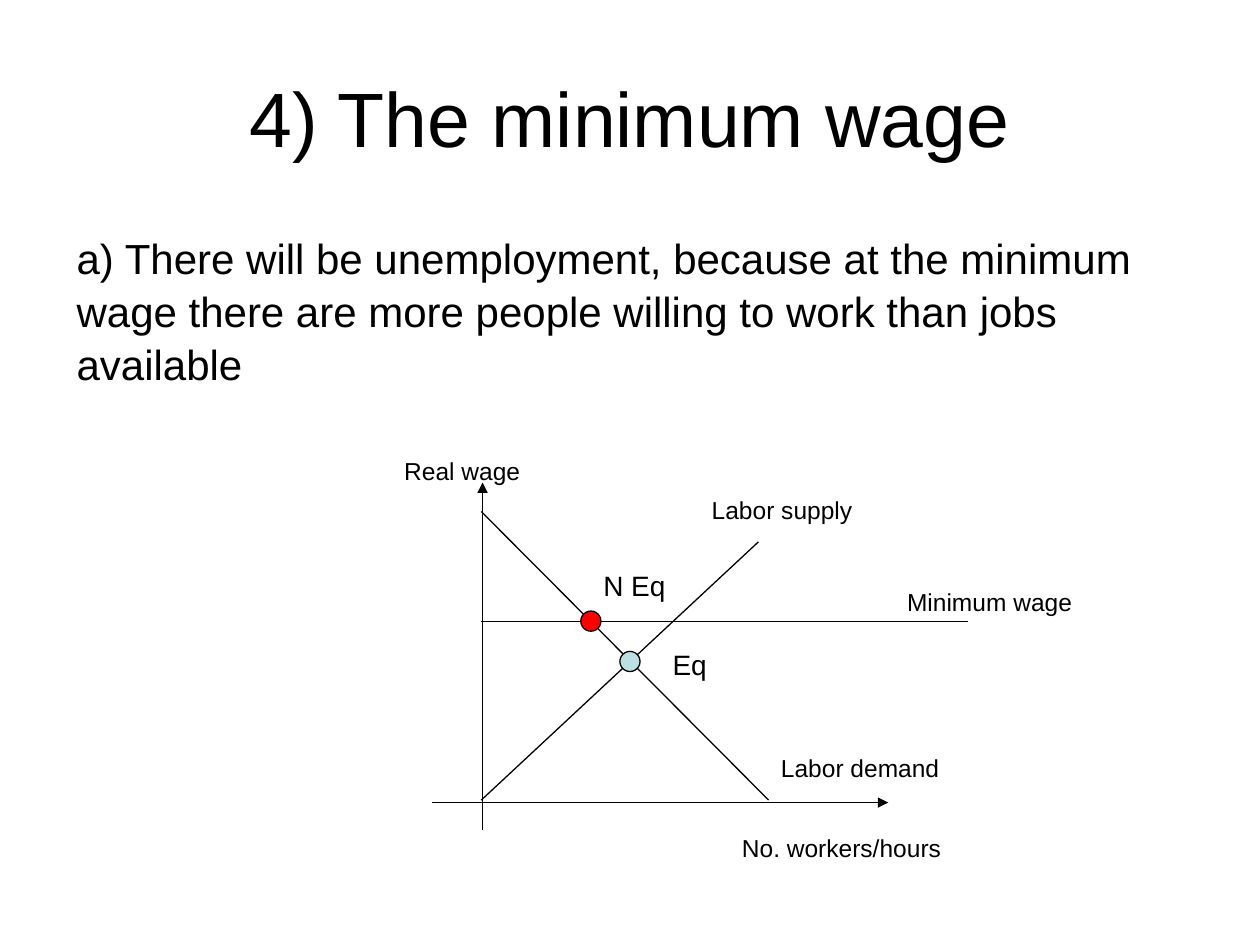
from lxml.etree import SubElement as Sub
from pptx import Presentation
from pptx.dml.color import RGBColor
from pptx.enum.shapes import MSO_CONNECTOR as Link, MSO_SHAPE as Shape
from pptx.enum.text import MSO_ANCHOR as Anchor, MSO_AUTO_SIZE as Fit, PP_ALIGN as Align
from pptx.oxml.ns import qn
from pptx.util import Inches, Pt

BLACK = "000000"


def color(code):
    return RGBColor.from_string(code)


def place(item, left, top, width, height):
    item.left, item.top = Inches(left), Inches(top)
    item.width, item.height = Inches(width), Inches(height)


def write(frame, text, size):
    frame.text = text
    para = frame.paragraphs[0]
    para.font.name = "Arial"
    para.font.size = Pt(size)
    para.font.color.rgb = color(BLACK)
    return para


def stroke(line):
    line.color.rgb = color(BLACK)
    line.width = Pt(0.75)


def add_title(slide, text):
    title = slide.shapes.title
    place(title, 0.5, 0.3, 9, 1.25)
    title.text_frame.vertical_anchor = Anchor.MIDDLE
    write(title.text_frame, text, 44).alignment = Align.CENTER


def add_body(slide, text):
    box = slide.shapes.add_textbox(0, 0, 0, 0)
    place(box, 0.51, 1.78, 9, 4.95)
    box.text_frame.word_wrap = True
    write(box.text_frame, text, 24).line_spacing = 1.05


def add_line(slide, x1, y1, x2, y2, arrow=False):
    ends = [Inches(n) for n in (x1, y1, x2, y2)]
    link = slide.shapes.add_connector(Link.STRAIGHT, *ends)
    stroke(link.line)
    if arrow:
        Sub(link.line._get_or_add_ln(), qn("a:tailEnd"), type="triangle")
    Sub(link._element.spPr, qn("a:effectLst"))


def add_dot(slide, x, y, fill):
    size = 0.16
    dot = slide.shapes.add_shape(Shape.OVAL, 0, 0, 0, 0)
    place(dot, x - size / 2, y - size / 2, size, size)
    dot.shadow.inherit = False
    dot.fill.solid()
    dot.fill.fore_color.rgb = color(fill)
    stroke(dot.line)


def add_label(slide, text, left, top, width, size=14):
    box = slide.shapes.add_textbox(0, 0, 0, 0)
    place(box, left, top, width, 0.34 if size == 14 else 0.37)
    box.text_frame.word_wrap = False
    box.text_frame.auto_size = Fit.SHAPE_TO_FIT_TEXT
    write(box.text_frame, text, size)


def add_graph(slide):
    left, base, wage = 3.82, 6.35, 4.93
    add_line(slide, 3.83, 6.59, 3.83, 3.83, True)
    add_line(slide, 3.43, 6.37, 7.05, 6.37, True)
    add_line(slide, left, base, 6.02, 4.3)
    add_line(slide, left, 4.06, 6.1, base)
    add_line(slide, left, wage, 7.68, wage)
    add_dot(slide, 5, 5.25, "BBE0E3")
    add_dot(slide, 4.69, wage, "FF0000")
    add_label(slide, "Minimum wage", 7.1, 4.61, 1.52)
    add_label(slide, "Labor supply", 5.55, 3.88, 1.32)
    add_label(slide, "Labor demand", 6.1, 5.93, 1.46)
    add_label(slide, "Real wage", 3.11, 3.57, 1.13)
    add_label(slide, "No. workers/hours", 5.79, 6.56, 1.83)
    add_label(slide, "N Eq", 4.69, 4.46, 0.69, 16)
    add_label(slide, "Eq", 5.24, 5.09, 0.47, 16)


def main():
    deck = Presentation()
    deck.slide_width, deck.slide_height = Inches(10), Inches(7.5)
    slide = deck.slides.add_slide(deck.slide_layouts[5])
    add_title(slide, "4) The minimum wage")
    add_body(slide, "a) There will be unemployment, because at the minimum wage "
                    "there are more people willing to work than jobs available")
    add_graph(slide)
    deck.save("out.pptx")


if __name__ == "__main__":
    main()
